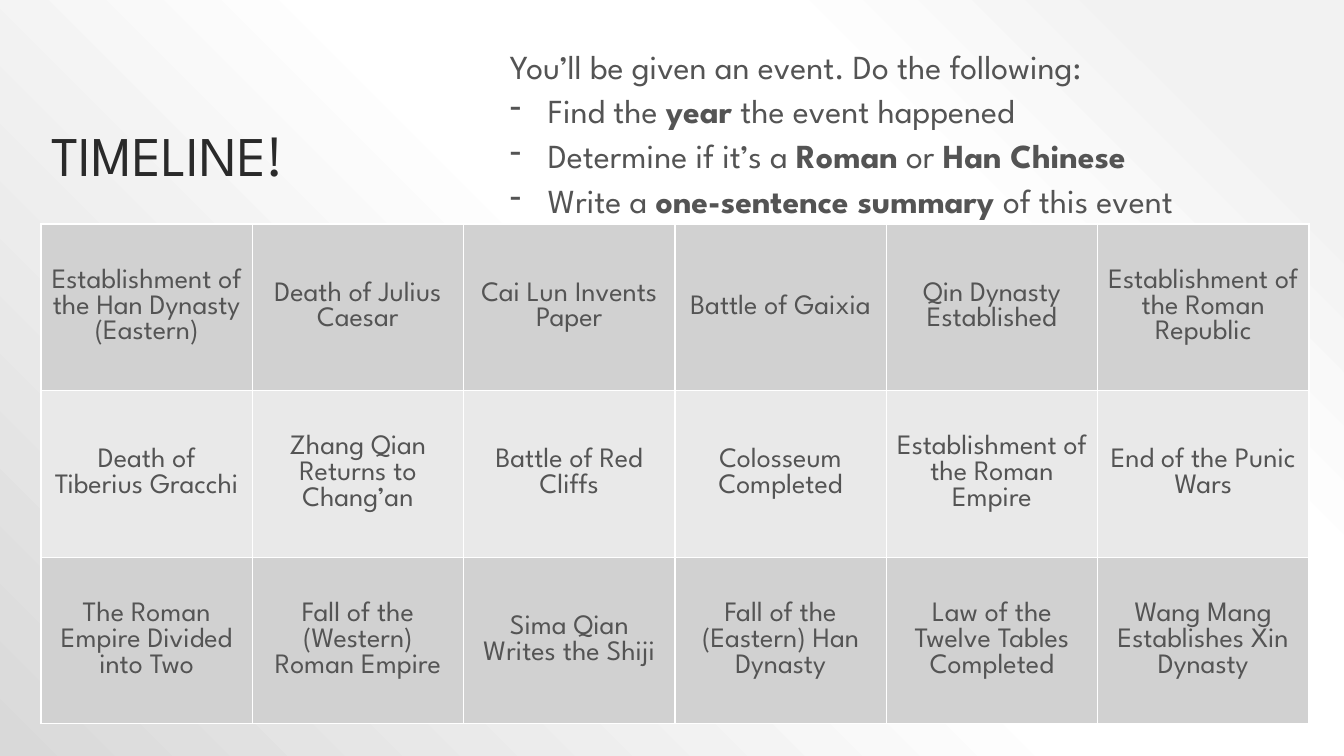
from lxml.etree import SubElement
from pptx import Presentation
from pptx.dml.color import RGBColor
from pptx.enum.text import MSO_ANCHOR, MSO_AUTO_SIZE, PP_ALIGN
from pptx.oxml import parse_xml
from pptx.oxml.ns import nsdecls, qn
from pptx.util import Pt

# Content
TITLE = "TIMELINE!"
INTRO = "You’ll be given an event. Do the following:"
# Each task is a list of spans: text, bold
TASKS = [
    [("Find the ", False), ("year", True), (" the event happened", False)],
    [("Determine if it’s a ", False), ("Roman", True), (" or ", False),
     ("Han Chinese", True)],
    [("Write a ", False), ("one-sentence summary ", True), ("of this event", False)],
]
EVENTS = [
    ["Establishment of the Han Dynasty (Eastern)", "Death of Julius Caesar",
     "Cai Lun Invents Paper", "Battle of Gaixia", "Qin Dynasty Established",
     "Establishment of the Roman Republic"],
    ["Death of Tiberius Gracchi", "Zhang Qian Returns to Chang’an",
     "Battle of Red Cliffs", "Colosseum Completed",
     "Establishment of the Roman Empire", "End of the Punic Wars"],
    ["The Roman Empire Divided into Two", "Fall of the (Western) Roman Empire",
     "Sima Qian Writes the Shiji", "Fall of the (Eastern) Han Dynasty",
     "Law of the Twelve Tables Completed", "Wang Mang Establishes Xin Dynasty"],
]

# Style, lengths in px
FONT = "League Spartan"
TITLE_COLOR, TEXT_COLOR, BORDER_COLOR = "2A2A2A", "545454", "FFFFFF"
ROW_COLORS = ["D1D1D1", "E9E9E9"]
BACKGROUND_STOPS = [(10, "F2F2F2"), (28, "FFFFFF"), (48, "FFFFFF"), (100, "D9D9D9")]
PAGE_SIZE = (1344, 756)
TITLE_BOX = (41, 30, 336, 164)
TASK_BOX = (500, 37, 812, 157)
TABLE_BOX = (41, 224, 1268, 500)
TASK_INDENT = 38
TASK_TOP_MARGIN = 13
EMU_PER_PX = 12192000 / PAGE_SIZE[0]


def px(length):
    return round(length * EMU_PER_PX)


def place(box):
    return [px(length) for length in box]


def color(value):
    return RGBColor.from_string(value)


def style(paragraph, size, value):
    for span in paragraph.runs:
        span.font.name = FONT
        span.font.size = Pt(size)
        span.font.color.rgb = color(value)


def add_dash(paragraph):
    properties = paragraph._p.get_or_add_pPr()
    properties.set("marL", str(px(TASK_INDENT)))
    properties.set("indent", str(-px(TASK_INDENT)))
    SubElement(properties, qn("a:buChar")).set("char", "-")


def add_borders(cell):
    properties = cell._tc.get_or_add_tcPr()
    for side in "LRTB":
        properties.append(parse_xml(
            f'<a:ln{side} {nsdecls("a")} w="{Pt(1)}"><a:solidFill>'
            f'<a:srgbClr val="{BORDER_COLOR}"/></a:solidFill></a:ln{side}>'))


deck = Presentation()
deck.slide_width, deck.slide_height = place(PAGE_SIZE)
page = deck.slides.add_slide(deck.slide_layouts[5])

# Background: circular gradient centred on the top right corner
page.background.fill.gradient()
gradient = page.background._cSld.find(".//" + qn("a:gradFill"))
stops = "".join(f'<a:gs pos="{position * 1000}"><a:srgbClr val="{value}"/></a:gs>'
                for position, value in BACKGROUND_STOPS)
gradient.getparent().replace(gradient, parse_xml(
    f'<a:gradFill {nsdecls("a")} rotWithShape="1"><a:gsLst>{stops}</a:gsLst>'
    '<a:path path="circle"><a:fillToRect l="100000" b="100000"/></a:path>'
    '</a:gradFill>'))

# Title
title = page.shapes.title
title.left, title.top, title.width, title.height = place(TITLE_BOX)
frame = title.text_frame
frame.text = TITLE
frame.auto_size = MSO_AUTO_SIZE.NONE
frame.vertical_anchor = MSO_ANCHOR.BOTTOM
heading = frame.paragraphs[0]
heading.alignment = PP_ALIGN.LEFT
heading.line_spacing = 0.9
style(heading, 40, TITLE_COLOR)

# Event table
table = page.shapes.add_table(len(EVENTS), len(EVENTS[0]), *place(TABLE_BOX)).table
for row_number, events in enumerate(EVENTS):
    for column_number, event in enumerate(events):
        cell = table.cell(row_number, column_number)
        add_borders(cell)
        cell.fill.solid()
        cell.fill.fore_color.rgb = color(ROW_COLORS[row_number % 2])
        cell.vertical_anchor = MSO_ANCHOR.MIDDLE
        cell.text_frame.text = event
        label = cell.text_frame.paragraphs[0]
        label.alignment = PP_ALIGN.CENTER
        style(label, 20, TEXT_COLOR)
        label.runs[0].font.bold = False

# Task list
frame = page.shapes.add_textbox(*place(TASK_BOX)).text_frame
frame.word_wrap = True
frame.auto_size = MSO_AUTO_SIZE.SHAPE_TO_FIT_TEXT
frame.margin_top = px(TASK_TOP_MARGIN)
frame.text = INTRO
for task in TASKS:
    para = frame.add_paragraph()
    para.space_before = Pt(6)
    add_dash(para)
    for text, bold in task:
        span = para.add_run()
        span.text = text
        span.font.bold = bold
for para in frame.paragraphs:
    para.line_spacing = 0.9
    style(para, 24, TEXT_COLOR)

deck.save("out.pptx")
